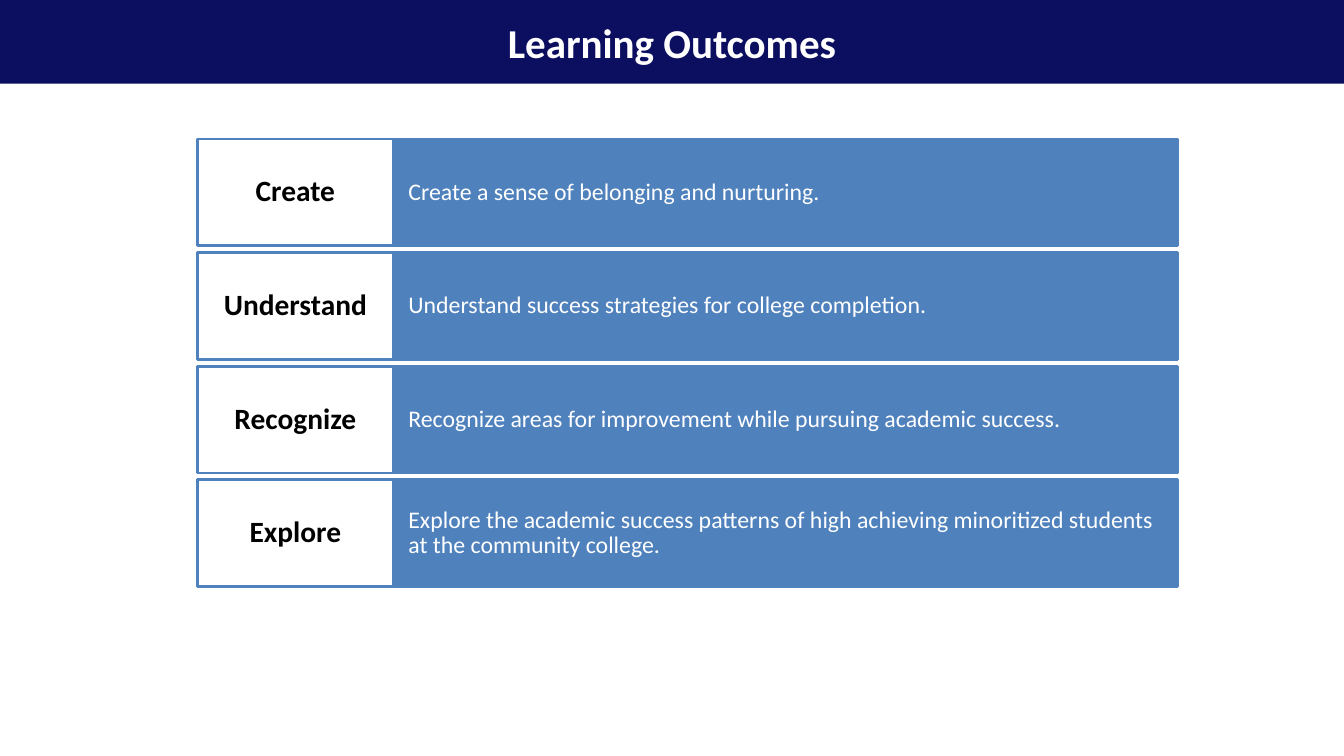
from pptx import Presentation
from pptx.dml.color import RGBColor
from pptx.enum import shapes, text
from pptx.util import Inches, Pt

NAVY, BLUE, WHITE, BLACK = "0C0E60", "4F81BD", "FFFFFF", "000000"
LEFT, TOP, PITCH, HEIGHT = 1.96, 1.38, 1.127, 1.06
LABEL_WIDTH, DETAIL_WIDTH = 1.94, 7.78
OUTCOMES = [
    ("Create", "Create a sense of belonging and nurturing."),
    ("Understand", "Understand success strategies for college completion."),
    ("Recognize", "Recognize areas for improvement while pursuing academic success."),
    ("Explore", "Explore the academic success patterns of high achieving "
                "minoritized students at the community college."),
]


def paint(target, color):
    """Give a fill a solid hex colour."""
    target.solid()
    target.fore_color.rgb = RGBColor.from_string(color)


def write(shape, words, size, color, bold, align, margins):
    """Write one vertically centred paragraph into a shape."""
    frame = shape.text_frame
    frame.word_wrap = True
    frame.auto_size = text.MSO_AUTO_SIZE.NONE
    frame.vertical_anchor = text.MSO_ANCHOR.MIDDLE
    frame.margin_left = frame.margin_right = Inches(margins[0])
    frame.margin_top = frame.margin_bottom = Inches(margins[1])
    para = frame.paragraphs[0]
    para.alignment = align
    para.line_spacing = 0.9
    span = para.add_run()
    span.text = words
    span.font.name = "Calibri"
    span.font.size = Pt(size)
    span.font.bold = bold
    span.font.color.rgb = RGBColor.from_string(color)


def add_title(page, words):
    """Turn the title placeholder into the banner across the top."""
    title = page.shapes.title
    title.left, title.top = Inches(0), Inches(0)
    title.width, title.height = Inches(13.33), Inches(0.83)
    paint(title.fill, NAVY)
    write(title, words, 29.3, WHITE, True, text.PP_ALIGN.CENTER, (0.1, 0.05))
    title.text_frame.paragraphs[0].line_spacing = 1.0


def add_box(page, left, top, width, fill):
    """Add an outlined rectangle of the row height."""
    box = page.shapes.add_shape(shapes.MSO_SHAPE.RECTANGLE, Inches(left),
                                Inches(top), Inches(width), Inches(HEIGHT))
    box.shadow.inherit = False
    paint(box.fill, fill)
    paint(box.line.fill, BLUE)
    box.line.width = Pt(2)
    return box


def add_outcome(page, top, label, detail):
    """Add one row: a blue detail box and a white label box."""
    detail_box = add_box(page, LEFT + LABEL_WIDTH, top, DETAIL_WIDTH, BLUE)
    write(detail_box, detail, 17, WHITE, False, text.PP_ALIGN.LEFT, (0.15, 0.27))
    label_box = add_box(page, LEFT, top, LABEL_WIDTH, WHITE)
    write(label_box, label, 21, BLACK, True, text.PP_ALIGN.CENTER, (0.1, 0.1))


def main():
    """Build the learning outcomes slide."""
    deck = Presentation()
    deck.slide_width, deck.slide_height = Inches(13.33), Inches(7.5)
    page = deck.slides.add_slide(deck.slide_layouts[5])
    paint(page.background.fill, WHITE)
    add_title(page, "Learning Outcomes")
    for row, (label, detail) in enumerate(OUTCOMES):
        add_outcome(page, TOP + row * PITCH, label, detail)
    deck.save("out.pptx")


if __name__ == "__main__":
    main()
